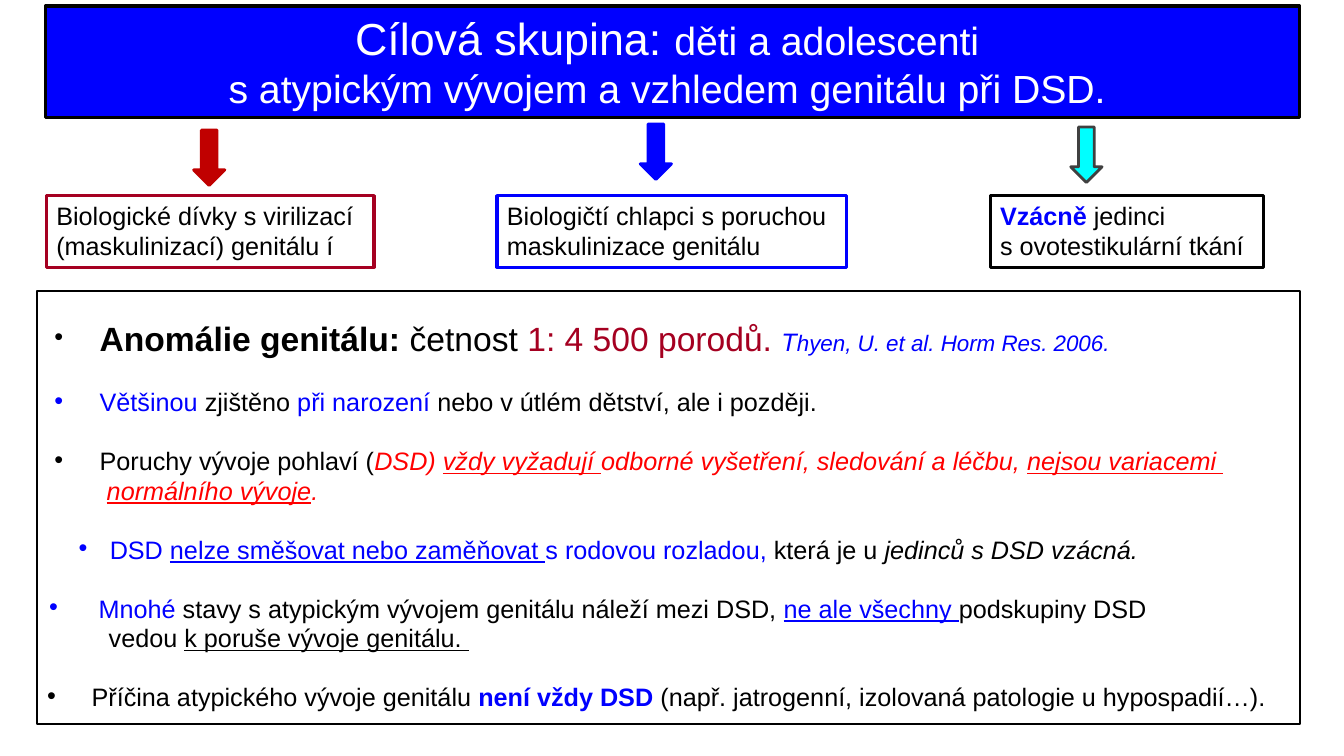
import pptx
import pptx.dml.color
import pptx.enum.shapes
import pptx.enum.text
import pptx.oxml.xmlchemy
import pptx.util
from lxml import etree
from pptx.oxml.ns import qn

Inches = pptx.util.Inches
Pt = pptx.util.Pt
SHAPES = pptx.enum.shapes.MSO_SHAPE
ALIGN = pptx.enum.text.PP_ALIGN
COLORS = {
    "black": "000000", "white": "FFFFFF", "blue": "0000FF", "red": "FF0000",
    "wine": "A50021", "crimson": "C00000", "cyan": "00FFFF", "gray": "404040",
}

TITLE = [
    [("Cílová skupina: ", "white", 32, ""), ("děti a adolescenti ", "white", 28, "")],
    [("s atypickým vývojem a vzhledem genitálu při DSD. ", "white", 28, "")],
]

GROUPS = [
    ((0.46, 1.94, 3.25, 0.71), "wine", [
        [("Biologické dívky s virilizací", "black", 18, "")],
        [("(maskulinizací) genitálu í", "black", 18, "")]]),
    ((4.93, 1.94, 3.47, 0.71), "blue", [
        [("Biologičtí chlapci s poruchou", "black", 18, "")],
        [("maskulinizace genitálu", "black", 18, "")]]),
    ((9.82, 1.94, 2.71, 0.71), "black", [
        [("Vzácně", "blue", 18, "b"), (" jedinci", "black", 18, "")],
        [("s ovotestikulární tkání", "black", 18, "")]]),
]

ARROWS = [
    (1.92, 1.29, "crimson", "crimson"),
    (6.35, 1.23, "blue", "blue"),
    (10.62, 1.26, "cyan", "gray"),
]

FACTS = [
    (0.07, 0.52, [
        ("Anomálie genitálu: ", "black", 24, "b"), ("četnost ", "black", 24, ""),
        ("1: 4 500 porodů. ", "wine", 24, ""), ("T", "blue", 18, "i"),
        ("hyen, U. et al. Horm Res. 2006.", "blue", 16, "i")]),
    (0.07, 0.52, [
        ("Většinou ", "blue", 18, ""), ("zjištěno ", "black", 18, ""),
        ("při narození", "blue", 18, ""),
        (" nebo v útlém dětství, ale i později.", "black", 18, "")]),
    (0.07, 0.52, [
        ("Poruchy vývoje pohlaví (", "black", 18, ""), ("DSD) ", "red", 18, "i"),
        ("vždy vyžadují ", "red", 18, "iu"),
        ("odborné vyšetření, sledování a léčbu, ", "red", 18, "i"),
        ("nejsou variacemi ", "red", 18, "iu")]),
    (None, 0.59, [("normálního vývoje", "red", 18, "iu"), (".", "red", 18, "i")]),
    (0.31, 0.62, [
        ("DSD ", "blue", 18, ""), ("nelze směšovat nebo zaměňovat ", "blue", 18, "u"),
        ("s rodovou rozladou, ", "blue", 18, ""), ("která je u ", "black", 18, ""),
        ("jedinců s DSD vzácná.", "black", 18, "i")]),
    (0.02, 0.51, [
        ("Mnohé ", "blue", 18, ""),
        ("stavy s atypickým vývojem genitálu náleží mezi DSD, ", "black", 18, ""),
        ("ne ale všechny ", "blue", 18, "u"), ("podskupiny DSD", "black", 18, "")]),
    (None, 0.61, [
        ("vedou ", "black", 18, ""), ("k poruše vývoje genitálu. ", "black", 18, "u")]),
    (0, 0.44, [
        ("Příčina atypického vývoje genitálu ", "black", 18, ""),
        ("není vždy DSD ", "blue", 18, "b"),
        ("(např. jatrogenní, izolovaná patologie u hypospadií…).", "black", 18, "")]),
]


def color(name):
    """Return the named colour."""
    return pptx.dml.color.RGBColor.from_string(COLORS[name])


def add_box(page, kind, place, fill, line, width):
    """Add a shape without shadow, with its fill and outline."""
    box = page.shapes.add_shape(kind, *map(Inches, place))
    box.shadow.inherit = False
    if fill:
        box.fill.solid()
        box.fill.fore_color.rgb = color(fill)
    else:
        box.fill.background()
    box.line.color.rgb = color(line)
    box.line.width = Pt(width)
    return box


def write_paragraphs(box, lines, align=ALIGN.LEFT, wrap=True):
    """Write lines of styled spans from the top of a box."""
    frame = box.text_frame
    frame.word_wrap = wrap
    frame.vertical_anchor = pptx.enum.text.MSO_ANCHOR.TOP
    for index, spans in enumerate(lines):
        para = frame.add_paragraph() if index else frame.paragraphs[0]
        para.alignment = align
        for text, shade, size, style in spans:
            span = para.add_run()
            span.text = text
            span.font.name = "Arial"
            span.font.size = Pt(size)
            span.font.color.rgb = color(shade)
            span.font.bold = "b" in style
            span.font.italic = "i" in style
            span.font.underline = "u" in style
    return frame.paragraphs


def add_title(page, place):
    """Add the blue title banner."""
    box = add_box(page, SHAPES.RECTANGLE, place, "blue", "black", 2.25)
    write_paragraphs(box, TITLE, ALIGN.CENTER)


def add_group(page, place, line, lines):
    """Add one outlined patient group."""
    box = add_box(page, SHAPES.RECTANGLE, place, None, line, 2.25)
    write_paragraphs(box, lines, wrap=False)


def add_facts(page, place):
    """Add the framed list of facts."""
    box = add_box(page, SHAPES.RECTANGLE, place, None, "black", 1.5)
    box.text_frame.margin_top = Inches(0.37)
    paragraphs = write_paragraphs(box, [spans for _, _, spans in FACTS])
    for index, (para, (bullet, indent, spans)) in enumerate(zip(paragraphs, FACTS)):
        para.line_spacing = 0.7
        para.space_before = Pt(0 if index == 0 else 6 if bullet is None else 27)
        settings = para._p.get_or_add_pPr()
        settings.set("marL", str(Inches(indent)))
        settings.set("indent", "0")
        if bullet is not None:
            settings.set("indent", str(Inches(bullet - indent)))
            scale = round(18 / spans[0][2] * 100000)
            etree.SubElement(settings, qn("a:buSzPct")).set("val", str(scale))
            etree.SubElement(settings, qn("a:buFont")).set("typeface", "Arial")
            etree.SubElement(settings, qn("a:buChar")).set("char", "•")


def main():
    """Build the slide and save the deck."""
    deck = pptx.Presentation()
    deck.slide_width, deck.slide_height = Inches(13.33), Inches(7.5)
    page = deck.slides.add_slide(deck.slide_layouts[6])
    add_title(page, (0.45, 0.06, 12.44, 1.11))
    add_facts(page, (0.37, 2.89, 12.52, 4.29))
    for place, line, lines in GROUPS:
        add_group(page, place, line, lines)
    for left, top, fill, line in ARROWS:
        add_box(page, SHAPES.DOWN_ARROW, (left, top, 0.31, 0.55), fill, line, 2)
    deck.save("out.pptx")


if __name__ == "__main__":
    main()
